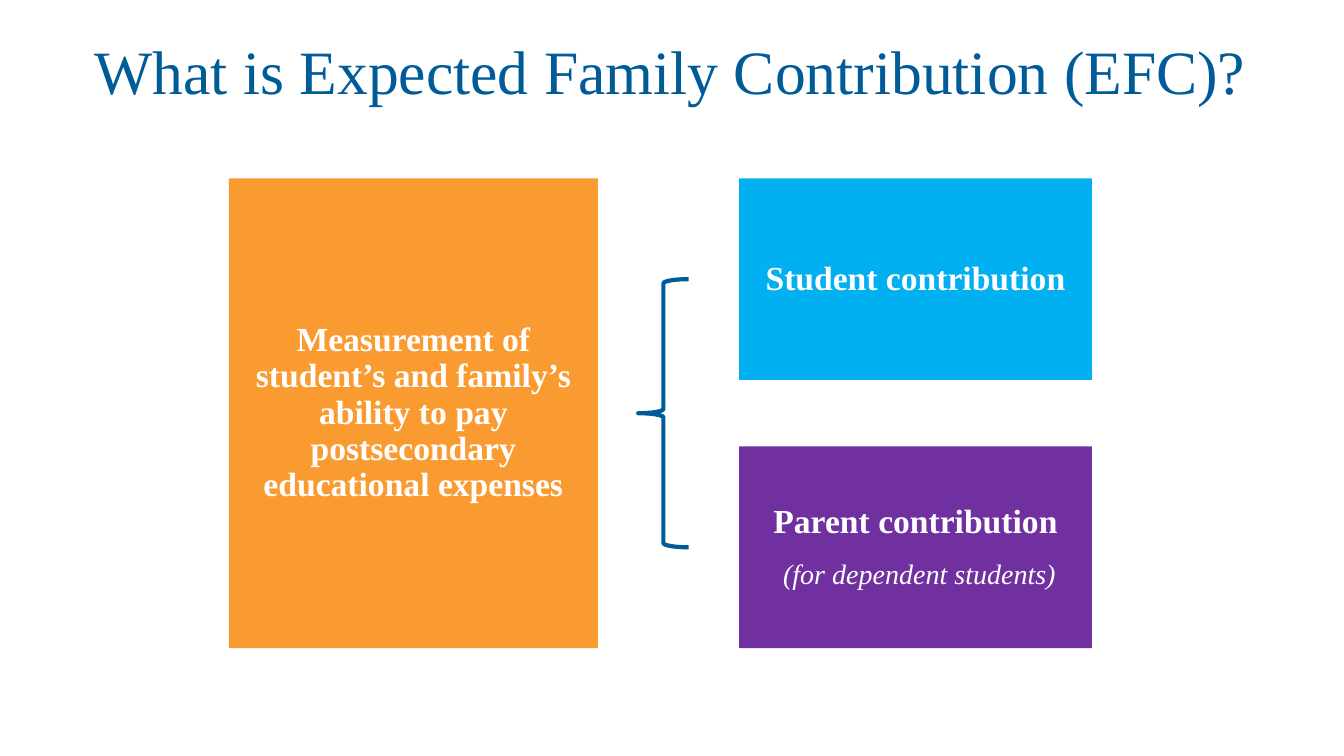
from pptx import Presentation
from pptx.dml.color import RGBColor
from pptx.enum import shapes, text
from pptx.util import Inches, Pt

FONT_NAME = "Times New Roman"
BLUE = RGBColor(0x00, 0x5B, 0x99)
ORANGE = RGBColor(0xFA, 0x9B, 0x32)
CYAN = RGBColor(0x00, 0xB0, 0xF0)
PURPLE = RGBColor(0x70, 0x30, 0xA0)
WHITE = RGBColor(0xFF, 0xFF, 0xFF)

HEADING = {"size": Pt(44)}
STRONG = {"size": Pt(24), "bold": True}
NOTE = {"size": Pt(20), "italic": True}


def write_paragraph(paragraph, wording, color, font_format):
    paragraph.line_spacing = 0.9
    run = paragraph.add_run()
    run.text = wording
    run.font.name = FONT_NAME
    run.font.color.rgb = color
    for name, value in font_format.items():
        setattr(run.font, name, value)


def add_title(slide, left, top, width, height, wording):
    title = slide.shapes.add_textbox(
        Inches(left), Inches(top), Inches(width), Inches(height))
    title.text_frame.word_wrap = True
    write_paragraph(title.text_frame.paragraphs[0], wording, BLUE, HEADING)


def add_panel(slide, left, top, width, height, color, label, note=None):
    panel = slide.shapes.add_shape(
        shapes.MSO_SHAPE.RECTANGLE,
        Inches(left), Inches(top), Inches(width), Inches(height))
    panel.shadow.inherit = False
    panel.fill.solid()
    panel.fill.fore_color.rgb = color
    panel.line.fill.background()

    frame = panel.text_frame
    frame.word_wrap = True
    frame.vertical_anchor = text.MSO_ANCHOR.MIDDLE
    for side in ("left", "top", "right", "bottom"):
        setattr(frame, f"margin_{side}", Inches(0.15))

    paragraph = frame.paragraphs[0]
    paragraph.alignment = text.PP_ALIGN.CENTER
    write_paragraph(paragraph, label, WHITE, STRONG)
    if note:
        paragraph = frame.add_paragraph()
        paragraph.alignment = text.PP_ALIGN.CENTER
        paragraph.space_before = Pt(14)
        # Slight indent before the note
        paragraph._p.get_or_add_pPr().set("marL", str(Inches(0.08)))
        write_paragraph(paragraph, note, WHITE, NOTE)


def add_brace(slide, left, top, width, height):
    brace = slide.shapes.add_shape(
        shapes.MSO_SHAPE.LEFT_BRACE,
        Inches(left), Inches(top), Inches(width), Inches(height))
    brace.shadow.inherit = False
    brace.fill.background()
    brace.line.color.rgb = BLUE
    brace.line.width = Pt(3)


def add_contribution_diagram(slide, left, top, width, height):
    measure_width, part_width, part_height = 3.66, 3.5, 2
    brace_width, brace_gap = 0.5, 0.5
    part_left = left + width - part_width
    part_step = height - part_height

    # Whole measure on the left
    add_panel(slide, left, top, measure_width, height, ORANGE,
              "Measurement of student’s and family’s ability to pay "
              "postsecondary educational expenses")

    # Its two parts on the right
    parts = [
        (CYAN, "Student contribution", None),
        (PURPLE, "Parent contribution", "(for dependent students)"),
    ]
    for index, (color, label, note) in enumerate(parts):
        add_panel(slide, part_left, top + index * part_step,
                  part_width, part_height, color, label, note)

    # Brace spanning the middles of the two parts
    add_brace(slide, part_left - brace_gap - brace_width,
              top + part_height / 2, brace_width, part_step)


def main():
    presentation = Presentation()
    presentation.slide_width = Inches(13.33)
    presentation.slide_height = Inches(7.5)
    slide = presentation.slides.add_slide(presentation.slide_layouts[6])

    add_title(slide, 0.84, 0.36, 11.69, 1.25,
              "What is Expected Family Contribution (EFC)?")
    add_contribution_diagram(slide, 2.27, 1.77, 8.56, 4.66)

    presentation.save("out.pptx")


if __name__ == "__main__":
    main()
